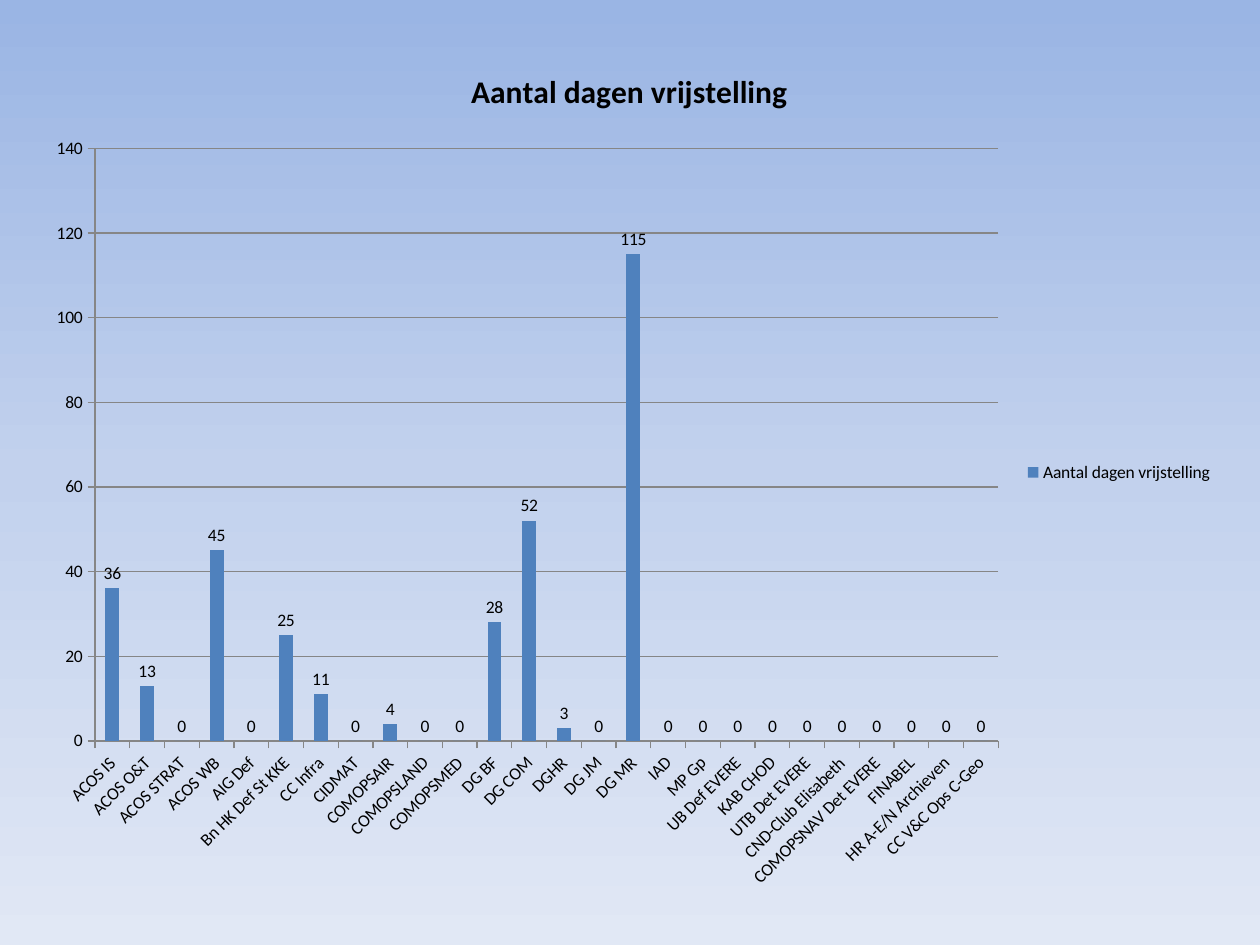
from copy import deepcopy

from pptx import Presentation
from pptx.chart.data import CategoryChartData
from pptx.dml.color import RGBColor
from pptx.enum.chart import XL_CHART_TYPE as Chart
from pptx.enum.chart import XL_LABEL_POSITION as LabelPos
from pptx.enum.chart import XL_LEGEND_POSITION as LegendPos
from pptx.enum.chart import XL_TICK_MARK as Tick
from pptx.oxml.ns import qn
from pptx.util import Inches, Pt

# Content
TITLE = "Aantal dagen vrijstelling"
DAYS = {
    "ACOS IS": 36, "ACOS O&T": 13, "ACOS STRAT": 0, "ACOS WB": 45,
    "AIG Def": 0, "Bn HK Def St KKE": 25, "CC Infra": 11, "CIDMAT": 0,
    "COMOPSAIR": 4, "COMOPSLAND": 0, "COMOPSMED": 0, "DG BF": 28,
    "DG COM": 52, "DGHR": 3, "DG JM": 0, "DG MR": 115, "IAD": 0,
    "MP Gp": 0, "UB Def EVERE": 0, "KAB CHOD": 0, "UTB Det EVERE": 0,
    "CND-Club Elisabeth": 0, "COMOPSNAV Det EVERE": 0, "FINABEL": 0,
    "HR A-E/N Archieven": 0, "CC V&C Ops C-Geo": 0,
}

COLORS = {"top": "9AB5E4", "middle": "C2D1ED", "bottom": "E1E8F5",
          "bar": "4F81BD", "line": "868686", "text": "000000"}
BACKGROUND = [(0, "top"), (0.5, "middle"), (1, "bottom")]


def rgb(name):
    return RGBColor.from_string(COLORS[name])


def set_font(font, **values):
    for name, value in values.items():
        setattr(font, name, value)
    font.color.rgb = rgb("text")


def set_background(slide):
    fill = slide.background.fill
    fill.gradient()
    fill.gradient_angle = 270  # counter-clockwise: top to bottom
    stops = slide.element.find(".//" + qn("a:gsLst"))
    stops.append(deepcopy(stops[0]))  # third stop
    for stop, (position, color) in zip(fill.gradient_stops, BACKGROUND):
        stop.position = position
        stop.color.rgb = rgb(color)


def add_days_chart(slide):
    data = CategoryChartData()
    data.categories = list(DAYS)
    data.add_series(TITLE, list(DAYS.values()))
    box = [Inches(n) for n in (0.26, 0.32, 9.47, 6.86)]
    chart = slide.shapes.add_chart(Chart.COLUMN_CLUSTERED, *box, data).chart
    set_font(chart.font, name="Calibri", size=Pt(10))

    # Title and legend
    chart.has_title = True
    tf = chart.chart_title.text_frame
    tf.text = TITLE
    set_font(tf.paragraphs[0].runs[0].font, name="Calibri", size=Pt(18), bold=True)
    chart.chart_title.include_in_layout = False
    chart.has_legend = True
    chart.legend.position = LegendPos.RIGHT
    chart.legend.include_in_layout = False

    # Axes
    value_axis = chart.value_axis
    value_axis.minimum_scale, value_axis.maximum_scale = 0, 140
    value_axis.major_unit = 20
    value_axis.has_major_gridlines = True
    for axis in (chart.category_axis, value_axis):
        axis.major_tick_mark = Tick.OUTSIDE
        axis.minor_tick_mark = Tick.NONE
    for part in (chart.category_axis, value_axis, value_axis.major_gridlines):
        part.format.line.color.rgb = rgb("line")
        part.format.line.width = Pt(0.75)

    # Bars and their values
    plot = chart.plots[0]
    plot.gap_width = 150
    plot.vary_by_categories = False
    fill = plot.series[0].format.fill
    fill.solid()
    fill.fore_color.rgb = rgb("bar")
    plot.has_data_labels = True
    plot.data_labels.show_value = True
    plot.data_labels.position = LabelPos.OUTSIDE_END


def main():
    prs = Presentation()
    prs.slide_width, prs.slide_height = Inches(10), Inches(7.5)
    slide = prs.slides.add_slide(prs.slide_layouts[6])
    set_background(slide)
    add_days_chart(slide)
    prs.save("out.pptx")


if __name__ == "__main__":
    main()
